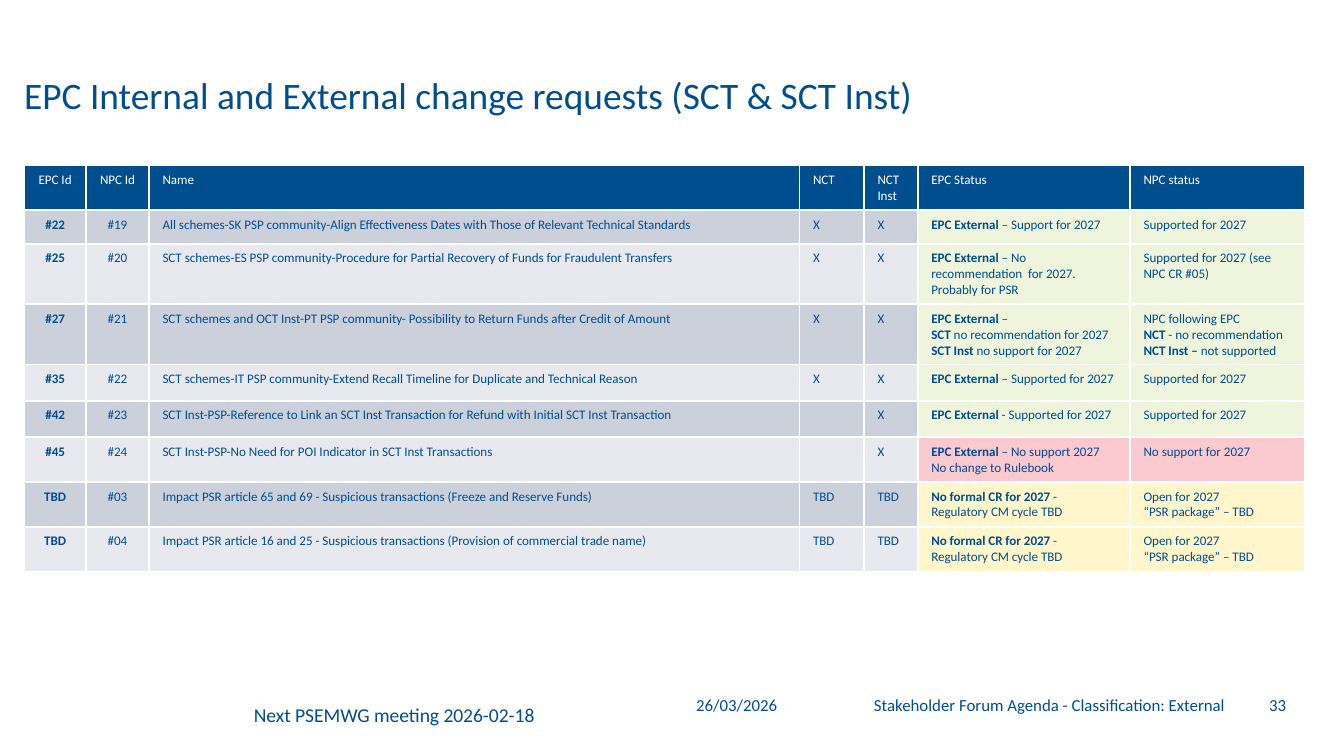
import pptx
import pptx.util
import pptx.dml.color
import pptx.enum.text
import pptx.oxml.ns
import lxml.etree

Inches = pptx.util.Inches
Align = pptx.enum.text.PP_ALIGN
Anchor = pptx.enum.text.MSO_ANCHOR
BLUE, WHITE = "014E8F", "FFFFFF"
GREEN, RED, YELLOW = "EFF5DC", "FBC9D0", "FFF6CB"
BANDS = ["CCD0DB", "E7E9EE"]
NO_MARGINS = dict.fromkeys(["margin_left", "margin_right", "margin_top", "margin_bottom"], 0)

COLUMN_WIDTHS = [0.46, 0.47, 4.84, 0.48, 0.4, 1.58, 1.3]
ROW_HEIGHTS = [0.28, 0.25, 0.25] + [0.27] * 6
HEADERS = ["EPC Id", "NPC Id", "Name", "NCT", "NCT Inst", "EPC Status", "NPC status"]

# Text between ** marks is bold; a line break starts a new paragraph
NO_FORMAL_REQUEST = "**No formal CR for 2027 **-\nRegulatory CM cycle TBD"
PSR_PACKAGE = "Open for 2027\n“PSR package” – TBD"
REQUESTS = [
    (GREEN, "#22", "#19", "All schemes-SK PSP community-Align Effectiveness Dates with Those of "
     "Relevant Technical Standards", "X", "X",
     "**EPC External **– Support for 2027", "Supported for 2027"),
    (GREEN, "#25", "#20", "SCT schemes-ES PSP community-Procedure for Partial Recovery of Funds "
     "for Fraudulent Transfers", "X", "X",
     "**EPC External **– No recommendation  for 2027. Probably for PSR",
     "Supported for 2027 (see NPC CR #05)"),
    (GREEN, "#27", "#21", "SCT schemes and OCT Inst-PT PSP community- Possibility to Return Funds "
     "after Credit of Amount", "X", "X",
     "**EPC External **–\n**SCT **no recommendation for 2027 **SCT Inst **no support for 2027",
     "NPC following EPC\n**NCT** - no recommendation\n**NCT Inst – **not supported"),
    (GREEN, "#35", "#22", "SCT schemes-IT PSP community-Extend Recall Timeline for Duplicate and "
     "Technical Reason", "X", "X",
     "**EPC External **– Supported for 2027", "Supported for 2027"),
    (GREEN, "#42", "#23", "SCT Inst-PSP-Reference to Link an SCT Inst Transaction for Refund with "
     "Initial SCT Inst Transaction", "", "X",
     "**EPC External **- Supported for 2027", "Supported for 2027"),
    (RED, "#45", "#24", "SCT Inst-PSP-No Need for POI Indicator in SCT Inst Transactions", "", "X",
     "**EPC External **– No support 2027\nNo change to Rulebook", "No support for 2027"),
    (YELLOW, "TBD", "#03", "Impact PSR article 65 and 69 - Suspicious transactions (Freeze and "
     "Reserve Funds)", "TBD", "TBD", NO_FORMAL_REQUEST, PSR_PACKAGE),
    (YELLOW, "TBD", "#04", "Impact PSR article 16 and 25 - Suspicious transactions (Provision of "
     "commercial trade name)", "TBD", "TBD", NO_FORMAL_REQUEST, PSR_PACKAGE),
]


def rgb(color):
    return pptx.dml.color.RGBColor.from_string(color)


def set_attributes(target, values):
    for name, value in values.items():
        setattr(target, name, value)


def write_text(text_frame, text, size, color=BLUE, align=Align.LEFT):
    for index, line in enumerate(text.split("\n")):
        paragraph = text_frame.paragraphs[0] if index == 0 else text_frame.add_paragraph()
        paragraph.alignment = align
        for position, part in enumerate(line.split("**")):
            if part:
                run = paragraph.add_run()
                run.text = part
                set_attributes(run.font, {"name": "Calibri", "size": pptx.util.Pt(size),
                                          "bold": position % 2 == 1})
                run.font.color.rgb = rgb(color)
        if not line:
            # An empty cell keeps the small size, so its row does not grow
            end = lxml.etree.SubElement(paragraph._p, pptx.oxml.ns.qn("a:endParaRPr"))
            end.set("sz", str(int(size * 100)))


def add_text(slide, box, text, size, align=Align.LEFT, **frame_format):
    shape = slide.shapes.add_textbox(*[Inches(length) for length in box])
    set_attributes(shape.text_frame, {"word_wrap": True, **frame_format})
    write_text(shape.text_frame, text, size, align=align)


def add_title(slide, box):
    add_text(slide, box, "EPC Internal and External change requests (SCT & SCT Inst)", 20,
             **NO_MARGINS)


def set_borders(cell):
    properties = cell._tc.get_or_add_tcPr()
    for side in "LRTB":
        line = lxml.etree.SubElement(properties, pptx.oxml.ns.qn(f"a:ln{side}"))
        line.set("w", str(pptx.util.Pt(1)))
        fill = lxml.etree.SubElement(line, pptx.oxml.ns.qn("a:solidFill"))
        lxml.etree.SubElement(fill, pptx.oxml.ns.qn("a:srgbClr")).set("val", WHITE)


def fill_cell(cell, text, fill, color=BLUE, align=Align.LEFT):
    set_borders(cell)
    cell.fill.solid()
    cell.fill.fore_color.rgb = rgb(fill)
    write_text(cell.text_frame, text, 7, color, align)


def add_request_table(slide, box):
    frame = slide.shapes.add_table(len(ROW_HEIGHTS), len(COLUMN_WIDTHS),
                                   *[Inches(length) for length in box])
    table = frame.table
    for column, width in zip(table.columns, COLUMN_WIDTHS):
        column.width = Inches(width)
    for row, height in zip(table.rows, ROW_HEIGHTS):
        row.height = Inches(height)

    # The two id columns are centred
    alignments = [Align.CENTER] * 2 + [Align.LEFT] * 5
    for column, (text, align) in enumerate(zip(HEADERS, alignments)):
        fill_cell(table.cell(0, column), text, BLUE, WHITE, align)

    # Banded rows, with the status columns coloured by outcome
    for row, (status_color, epc_id, *texts) in enumerate(REQUESTS, 1):
        fills = [BANDS[(row - 1) % 2]] * 5 + [status_color] * 2
        contents = [f"**{epc_id}**", *texts]
        for column, (text, fill, align) in enumerate(zip(contents, fills, alignments)):
            fill_cell(table.cell(row, column), text, fill, align=align)


def add_footer(slide, box):
    left, top, width, height = box
    footer_format = {**NO_MARGINS, "vertical_anchor": Anchor.BOTTOM}
    add_text(slide, (left + 1.19, top, 2.74, height),
             "Stakeholder Forum Agenda - Classification: External", 9, Align.RIGHT,
             **footer_format)
    add_text(slide, (left, top, 1.11, height), "26/03/2026", 9, **footer_format)
    add_text(slide, (left + width - 0.4, top, 0.4, height), "33", 9, Align.RIGHT,
             **{**footer_format, "margin_left": Inches(0.03)})


def add_meeting_note(slide, box):
    add_text(slide, box, "Next PSEMWG meeting 2026-02-18", 10.5,
             auto_size=pptx.enum.text.MSO_AUTO_SIZE.SHAPE_TO_FIT_TEXT)


def main():
    presentation = pptx.Presentation()
    # A 16:9 slide
    presentation.slide_width = Inches(10)
    presentation.slide_height = Inches(10) * 9 // 16
    slide = presentation.slides.add_slide(presentation.slide_layouts[6])
    add_title(slide, (0.18, 0.54, 9.15, 0.53))
    add_footer(slide, (5.18, 4.9, 4.39, 0.42))
    add_request_table(slide, (0.18, 1.23, 9.53, 3.02))
    add_meeting_note(slide, (1.79, 5.18, 2.51, 0.28))
    presentation.save("out.pptx")


if __name__ == "__main__":
    main()
